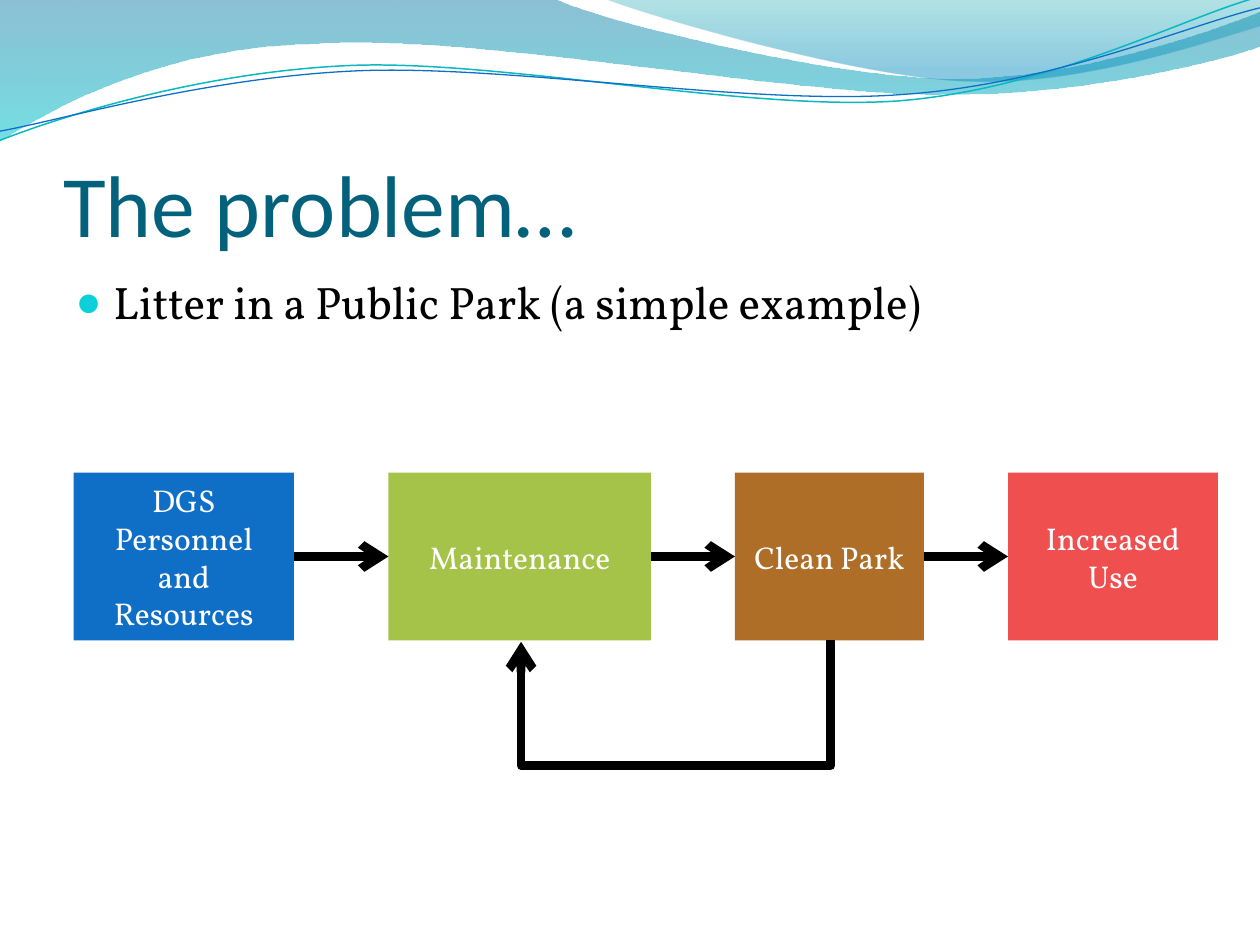
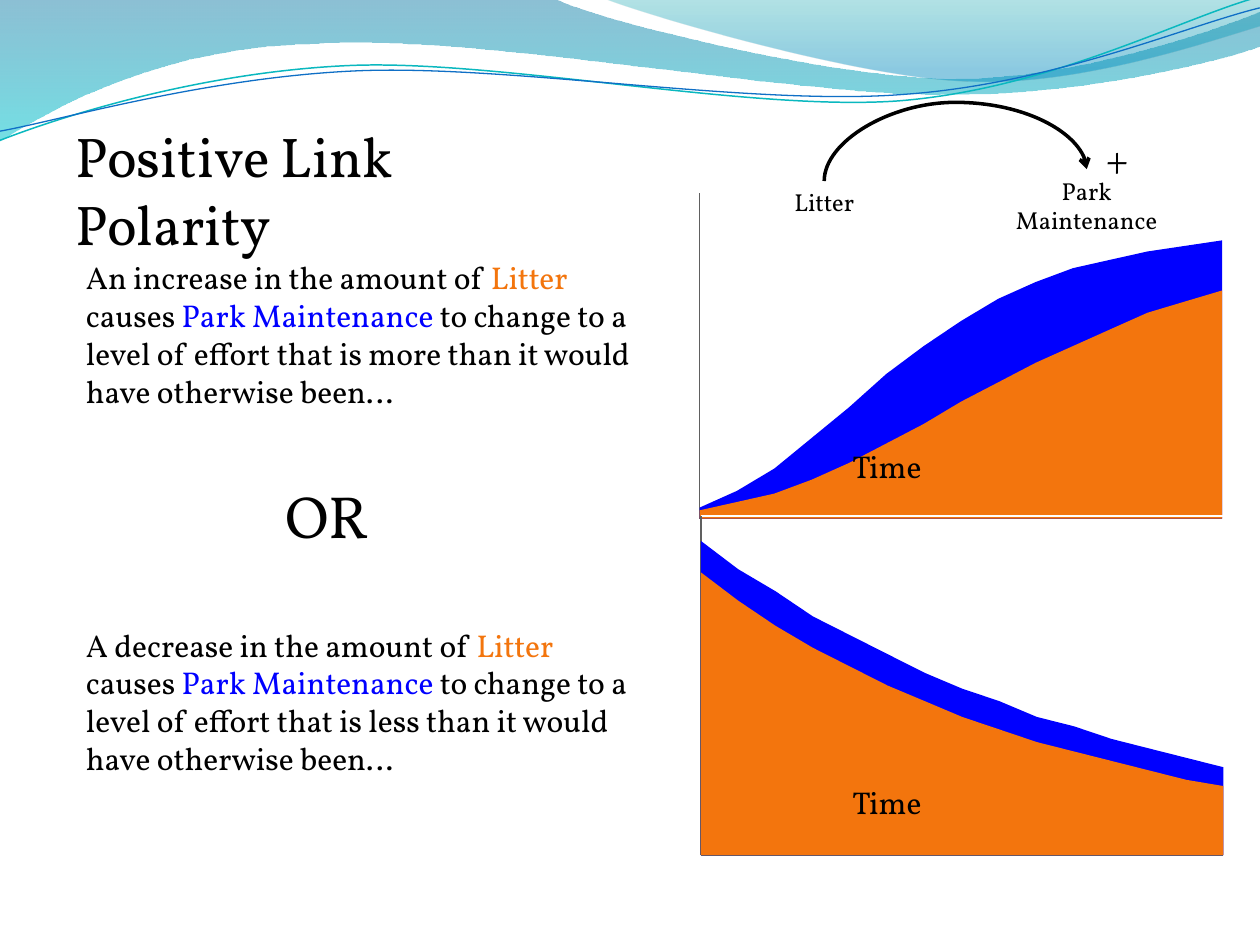
import math
from itertools import pairwise

from lxml import etree
from pptx import Presentation
from pptx import util as u
from pptx.chart import data as chart_data
from pptx.dml.color import RGBColor
from pptx.enum import chart as charts, shapes, text
from pptx.oxml.ns import qn

SCALE = 9525  # EMU per px, 96 px to the inch
COLOURS = {
    "black": "000000", "white": "FFFFFF", "title": "04617B", "bullet": "0BD0D9",
    "blue": "0F6FC6", "green": "A5C249", "brown": "AE6E28", "red": "EF4F4F",
    "litter": "F3750D", "upkeep": "0000FF", "teal line": "0AB8BF",
    "axis": "606060", "baseline": "8C4A4A",
    "deep": "0074A1", "aqua": "00C6CF", "sea": "00A1A9", "sky": "008BBF",
}


def px(*lengths):
    return [round(length * SCALE) for length in lengths]


def rgb(name):
    return RGBColor.from_string(COLOURS[name])


def add_xml(parent, tag, **attributes):
    return etree.SubElement(parent, qn(tag), {k: str(v) for k, v in attributes.items()})


def write(frame, content, size=18, colour="black", font="Vollkorn", align="LEFT",
          anchor="TOP", insets=(9.6, 4.8, 9.6, 4.8)):
    """Fill a frame with one paragraph: a string, or (string, colour) spans."""
    frame.word_wrap = True
    frame.auto_size = text.MSO_AUTO_SIZE.NONE
    frame.vertical_anchor = getattr(text.MSO_ANCHOR, anchor)
    (frame.margin_left, frame.margin_top,
     frame.margin_right, frame.margin_bottom) = px(*insets)
    para = frame.paragraphs[0]
    para.alignment = getattr(text.PP_ALIGN, align)
    spans = [(content, colour)] if isinstance(content, str) else content
    for words, span_colour in spans:
        span = para.add_run()
        span.text = words
        span.font.size = u.Pt(size)
        span.font.name = font
        span.font.color.rgb = rgb(span_colour)
    return para


def turn(points, degrees):
    """Rotate points clockwise about the middle of the band they span."""
    middle = [(min(axis) + max(axis)) / 2 for axis in zip(*points)]
    cos, sin = math.cos(math.radians(degrees)), math.sin(math.radians(degrees))
    offsets = [(x - middle[0], y - middle[1]) for x, y in points]
    return [(middle[0] + x * cos - y * sin, middle[1] + x * sin + y * cos)
            for x, y in offsets]


class Painter:
    def __init__(self):
        self.deck = Presentation()
        self.deck.slide_width, self.deck.slide_height = px(960, 720)
        self.page = None

    def new_page(self, layout):
        self.page = self.deck.slides.add_slide(self.deck.slide_layouts.get_by_name(layout))

    def group(self, parts):
        return self.page.shapes.add_group_shape(parts)

    def placeholder(self, index, area, content, **style):
        box = self.page.placeholders[index]
        box.left, box.top, box.width, box.height = px(*area)
        return write(box.text_frame, content, **style)

    def bullet(self, area, content, **style):
        para = self.placeholder(1, area, content, **style)
        para.space_before = u.Pt(5)
        props = para._p.get_or_add_pPr()
        indent = u.Inches(0.3)
        props.set("marL", str(indent))
        props.set("indent", str(-indent))
        add_xml(add_xml(props, "a:buClr"), "a:srgbClr", val=COLOURS["bullet"])
        add_xml(props, "a:buSzPct", val=95000)
        add_xml(props, "a:buChar", char="●")

    def label(self, area, content, **style):
        box = self.page.shapes.add_textbox(*px(*area))
        write(box.text_frame, content, **style)
        return box

    def block(self, area, content, colour):
        box = self.page.shapes.add_shape(shapes.MSO_SHAPE.RECTANGLE, *px(*area))
        box.shadow.inherit = False
        box.fill.solid()
        box.fill.fore_color.rgb = rgb(colour)
        box.line.fill.background()
        write(box.text_frame, content, colour="white", align="CENTER", anchor="MIDDLE")

    def arrow(self, start, end, weight=5, kind="STRAIGHT"):
        link = self.page.shapes.add_connector(getattr(shapes.MSO_CONNECTOR, kind),
                                              *px(*start, *end))
        link.line.color.rgb = rgb("black")
        link.line.width = u.Pt(weight)
        props = link.element.spPr
        add_xml(props.find(qn("a:ln")), "a:tailEnd", type="arrow")
        add_xml(props, "a:effectLst")
        return link

    def detour(self, start, end, reach, weight, kind):
        """Connector that leaves vertically by reach px, crosses and comes back."""
        (x1, y1), (x2, y2) = start, end
        middle_x, middle_y = (x1 + x2) / 2, (y1 + y2) / 2
        half_w, half_h = (y2 - y1) / 2, (x1 - x2) / 2  # sides swap in the quarter turn
        link = self.arrow((middle_x - half_w, middle_y - half_h),
                          (middle_x + half_w, middle_y + half_h), weight, kind)
        props = link.element.spPr
        props.find(qn("a:xfrm")).set("rot", "5400000")
        bend = round(reach / abs(y2 - y1) * 100000)
        add_xml(props.find(qn("a:prstGeom")).find(qn("a:avLst")), "a:gd",
                name="adj1", fmla=f"val {bend}")
        return link

    def wave(self, start, segments, stops=None, line=None, rotation=0):
        """Chain of lines (2 numbers) and cubic curves (6 numbers), filled with
        (position, colour, opacity) stops or drawn as a (colour, width) line."""
        points = [start, *(p for s in segments for p in zip(s[::2], s[1::2]))]
        points = [px(*point) for point in turn(points, -rotation)]
        builder = self.page.shapes.build_freeform(*points[0], scale=1.0)
        builder.add_line_segments(points[1:], close=bool(stops))
        shape = builder.convert_to_shape()
        shape.shadow.inherit = False
        shape.rotation = rotation
        # Join each three control points into one curve
        corners = iter(list(shape.element.iter(qn("a:lnTo"))))
        for segment in segments:
            first, *others = [next(corners) for _ in segment[::2]]
            if others:
                first.tag = qn("a:cubicBezTo")
                for other in others:
                    first.append(other[0])
                    other.getparent().remove(other)
        if stops:
            shape.line.fill.background()
            shape.fill.gradient()
            shape.fill.gradient_angle = 270
            for stop, (position, colour, _) in zip(shape.fill.gradient_stops, stops):
                stop.position = position
                stop.color.rgb = rgb(colour)
            for node, (_, _, opacity) in zip(shape.element.iter(qn("a:srgbClr")), stops):
                add_xml(node, "a:alpha", val=opacity * 1000)
        else:
            shape.fill.background()
            shape.line.color.rgb = rgb(line[0])
            shape.line.width = u.Pt(line[1])
        return shape

    def to_master(self, parts):
        tree = self.deck.slide_master.shapes.element
        for place, part in enumerate(parts, 2):
            for node in part.element.iter(qn("p:cNvPr")):
                node.set("id", str(100 + int(node.get("id"))))
            tree.insert(place, part.element)

    def area_chart(self, area, plot, series, top, unit, baseline):
        data = chart_data.CategoryChartData()
        data.categories = [str(n) for n in range(1, 16)]
        for number, (_, values) in enumerate(series, 1):
            data.add_series(f"Series {number}", values)
        chart = self.page.shapes.add_chart(charts.XL_CHART_TYPE.AREA, *px(*area), data).chart
        chart.has_title = chart.has_legend = False
        chart.font.name, chart.font.size = "Vollkorn", u.Pt(10)
        chart.font.color.rgb = rgb("black")
        for one, (colour, _) in zip(chart.plots[0].series, series):
            one.format.fill.solid()
            one.format.fill.fore_color.rgb = rgb(colour)
            one.format.line.fill.background()
        for axis, colour in ((chart.category_axis, baseline), (chart.value_axis, "axis")):
            axis.tick_label_position = charts.XL_TICK_LABEL_POSITION.NONE
            axis.major_tick_mark = axis.minor_tick_mark = charts.XL_TICK_MARK.NONE
            axis.format.line.color.rgb = rgb(colour)
            axis.format.line.width = u.Pt(0.75)
        scale = chart.value_axis
        scale.minimum_scale, scale.maximum_scale, scale.major_unit = 0, top, unit
        scale.has_major_gridlines = True
        scale.major_gridlines.format.line.color.rgb = rgb("white")
        scale.major_gridlines.format.line.width = u.Pt(0.75)
        # Fixed inner plot area, as fractions of the chart
        plot_area = chart.element.find(f".//{qn('c:plotArea')}")
        for old in plot_area.findall(qn("c:layout")):
            plot_area.remove(old)
        layout = add_xml(plot_area, "c:layout")
        plot_area.insert(0, layout)
        manual = add_xml(layout, "c:manualLayout")
        add_xml(manual, "c:layoutTarget", val="inner")
        for side in "xy":
            add_xml(manual, f"c:{side}Mode", val="edge")
        for side, value in zip("xywh", plot):
            add_xml(manual, f"c:{side}", val=value)


def draw_waves(painter):
    painter.to_master([
        painter.wave((0, 0), [(422, -1), (457, 16, 637, 60, 728, 60),
                              (819, 60, 920, 25, 960, 9), (961, 35),
                              (944, 42, 835, 73, 716, 72), (597, 72, 367, 27, 247, 33),
                              (124, 35, 44, 80, -1, 108)],
                     stops=[(0, "deep", 45), (1, "aqua", 55)]),
        painter.wave((460, -1), [(489, 11, 655, 60, 738, 62), (822, 66, 923, 31, 960, 20),
                                 (960, 0)],
                     stops=[(0, "sea", 30), (0.8, "sky", 45)]),
        painter.group([
            painter.wave((0, 107), [(46, 89, 152, 55, 266, 50), (379, 45, 569, 85, 684, 77),
                                    (800, 68, 900, 14, 958, -2)],
                         line=("teal line", 0.85), rotation=357.3),
            painter.wave((0, 100), [(45, 92, 157, 59, 272, 54), (387, 49, 573, 81, 688, 72),
                                    (803, 64, 903, 20, 960, 6)],
                         line=("blue", 0.75), rotation=357.3),
        ]),
    ])


def problem_page(painter):
    painter.placeholder(0, (48, 74, 864, 120), "The problem…", size=50, colour="title",
                        font="Calibri", anchor="BOTTOM", insets=(0, 4.8, 0, 0))
    painter.bullet((48, 204, 864, 69), "Litter in a Public Park (a simple example)", size=26)

    # Flow from resources to use
    top, height = 360, 128
    middle = top + height / 2
    stages = [("DGS Personnel and Resources", 56, 168, "blue"),
              ("Maintenance", 296, 200, "green"),
              ("Clean Park", 560, 144, "brown"),
              ("Increased Use", 768, 160, "red")]
    for name, left, width, colour in stages:
        painter.block((left, top, width, height), name, colour)
    for (_, left, width, _), (_, next_left, _, _) in pairwise(stages):
        painter.arrow((left + width, middle), (next_left, middle))

    # Feedback to maintenance
    painter.detour((633, 488), (397, 489), reach=97, weight=5, kind="ELBOW")


def polarity_page(painter):
    painter.placeholder(0, (48, 88, 412, 61), "Positive Link Polarity", size=32)

    # Growth and decline over time
    painter.area_chart(
        (520, 136, 424, 317), (0.031, 0.035, 0.939, 0.783),
        [("litter", [3, 6, 9, 14, 20, 27, 34, 42, 49, 56, 62, 68, 74, 78, 82]),
         ("upkeep", [4, 10, 18, 29, 40, 52, 62, 71, 79, 85, 90, 93, 96, 98, 100])],
        top=117, unit=39, baseline="baseline")
    painter.area_chart(
        (512, 368, 424, 288), (0.052, 0.087, 0.939, 0.898),
        [("litter", [90, 81, 73, 66, 60, 54, 49, 44, 40, 36, 33, 30, 27, 24, 22]),
         ("upkeep", [100, 91, 84, 76, 70, 64, 58, 53, 49, 44, 41, 37, 34, 31, 28])],
        top=108, unit=27, baseline="axis")

    # The two readings of the link
    for top, change, level in ((192, "An increase", "more"), (472, "A decrease", "less")):
        painter.label((56, top, 440, 126), [
            (f"{change} in the amount of ", "black"), ("Litter", "litter"),
            (" causes ", "black"), ("Park Maintenance ", "upkeep"),
            (f"to change to a level of effort that is {level} than it would "
             "have otherwise been…", "black")])
    for top in (336, 592):
        painter.label((640, top, 80, 38), "Time")
    painter.label((208, 360, 88, 64), "OR", size=34)

    # Causal link
    painter.group([
        painter.label((584, 138, 88, 33), "Litter", size=14, align="CENTER"),
        painter.label((760, 129, 136, 55), "Park Maintenance", size=14, align="CENTER"),
        painter.detour((628, 138), (828, 129), reach=60, weight=2, kind="CURVE"),
        painter.label((833, 96, 21, 28), "+", size=24),
    ])


def main():
    painter = Painter()
    painter.new_page("Title and Content")
    draw_waves(painter)
    problem_page(painter)
    painter.new_page("Title Only")
    polarity_page(painter)
    painter.deck.save("out.pptx")


if __name__ == "__main__":
    main()
